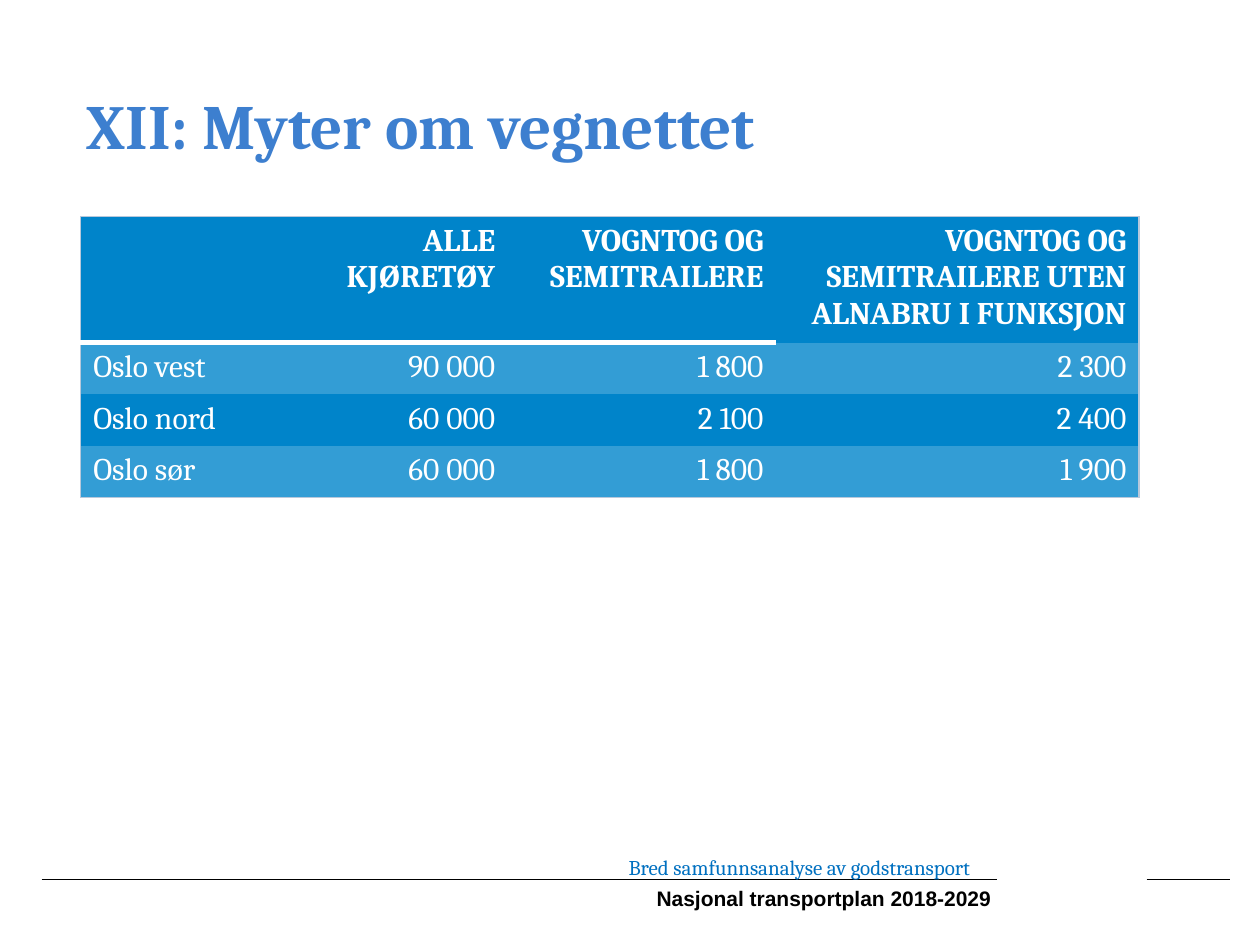
from lxml.etree import SubElement
from pptx import Presentation
from pptx.dml.color import RGBColor
from pptx.enum.shapes import MSO_CONNECTOR
from pptx.enum.text import MSO_ANCHOR, PP_ALIGN
from pptx.oxml.ns import qn
from pptx.util import Inches, Pt

COLORS = {
    "title": "3D7FCF",
    "caption": "0070C0",
    "black": "000000",
    "white": "FFFFFF",
    "band_dark": "0084CA",
    "band_light": "339DD5",
    "frame": "B8C8DB",
}
PLAIN_TABLE_STYLE = "{2D5ABB26-0587-4C30-8999-92F81FD0307C}"
HEADERS = ["", "ALLE KJØRETØY", "VOGNTOG OG SEMITRAILERE",
           "VOGNTOG OG SEMITRAILERE UTEN ALNABRU I FUNKSJON"]
TRAFFIC = [
    ["Oslo vest", "90 000", "1 800", "2 300"],
    ["Oslo nord", "60 000", "2 100", "2 400"],
    ["Oslo sør", "60 000", "1 800", "1 900"],
]
COLUMN_WIDTHS = [1.42, 1.97, 2.13, 2.88]
ROW_HEIGHTS = [0.99, 0.41, 0.41, 0.41]


def color(name):
    return RGBColor.from_string(COLORS[name])


def add_span(para, text, size, ink, font="Cambria", bold=False):
    span = para.add_run()
    span.text = text
    span.font.name = font
    span.font.size = Pt(size)
    span.font.bold = bold
    span.font.color.rgb = color(ink)


def add_label(page, area, text, size, ink, align=PP_ALIGN.LEFT,
              anchor=MSO_ANCHOR.TOP, wrap=False, **style):
    box = page.shapes.add_textbox(*(Inches(length) for length in area))
    frame = box.text_frame
    frame.word_wrap = wrap
    frame.vertical_anchor = anchor
    para = frame.paragraphs[0]
    para.alignment = align
    add_span(para, text, size, ink, **style)


def add_rule(page, left, top, right):
    rule = page.shapes.add_connector(
        MSO_CONNECTOR.STRAIGHT, Inches(left), Inches(top), Inches(right), Inches(top))
    rule.line.color.rgb = color("black")
    rule.line.width = Pt(1)
    SubElement(rule._element.spPr, qn("a:effectLst"))


def add_border(cell, side, ink, width):
    line = SubElement(cell._tc.get_or_add_tcPr(), qn(f"a:ln{side}"), w=str(Pt(width)))
    fill = SubElement(line, qn("a:solidFill"))
    SubElement(fill, qn("a:srgbClr"), val=COLORS[ink])


def style_cell(cell, row, column):
    last_row, last_column = len(TRAFFIC), len(HEADERS) - 1
    # Outer frame, and a white rule below the header up to the last column
    if column == 0:
        add_border(cell, "L", "frame", 0.75)
    if column == last_column:
        add_border(cell, "R", "frame", 0.75)
    if row == 0:
        add_border(cell, "T", "frame", 0.75)
        if column < last_column:
            add_border(cell, "B", "white", 3)
    elif row == last_row:
        add_border(cell, "B", "frame", 0.75)
    cell.fill.solid()
    cell.fill.fore_color.rgb = color("band_light" if row % 2 else "band_dark")


def add_traffic_table(page, left, top):
    rows = [HEADERS] + TRAFFIC
    shape = page.shapes.add_table(
        len(rows), len(HEADERS), Inches(left), Inches(top),
        Inches(sum(COLUMN_WIDTHS)), Inches(sum(ROW_HEIGHTS)))
    table = shape.table
    table.horz_banding = False
    table._tbl.tblPr.find(qn("a:tableStyleId")).text = PLAIN_TABLE_STYLE
    for column, width in zip(table.columns, COLUMN_WIDTHS):
        column.width = Inches(width)
    for row, height in zip(table.rows, ROW_HEIGHTS):
        row.height = Inches(height)
    for r, texts in enumerate(rows):
        for c, text in enumerate(texts):
            cell = table.cell(r, c)
            style_cell(cell, r, c)
            para = cell.text_frame.paragraphs[0]
            para.alignment = PP_ALIGN.RIGHT if c else PP_ALIGN.LEFT
            if text:
                add_span(para, text, 18, "white", bold=r == 0)


def add_footer(page, left, top):
    # Broken rule with the plan name below and the report name above
    add_rule(page, left, top, left + 7.58)
    add_rule(page, left + 8.77, top, left + 9.43)
    add_label(page, (left + 4.71, top + 0.02, 3, 0.25),
              "Nasjonal transportplan 2018-2029", 12, "black", wrap=True,
              align=PP_ALIGN.CENTER, anchor=MSO_ANCHOR.MIDDLE, font="Arial", bold=True)
    add_label(page, (left + 4.56, top - 0.25, 3.11, 0.3),
              "Bred samfunnsanalyse av godstransport", 12, "caption")


def main():
    deck = Presentation()
    deck.slide_width, deck.slide_height = Inches(10), Inches(7.5)
    page = deck.slides.add_slide(deck.slide_layouts[6])
    add_footer(page, 0.33, 6.98)
    add_label(page, (0.59, 0.6, 8.61, 0.77), "XII: Myter om vegnettet", 36, "title",
              anchor=MSO_ANCHOR.MIDDLE, wrap=True, bold=True)
    add_traffic_table(page, 0.64, 1.72)
    deck.save("out.pptx")


if __name__ == "__main__":
    main()
